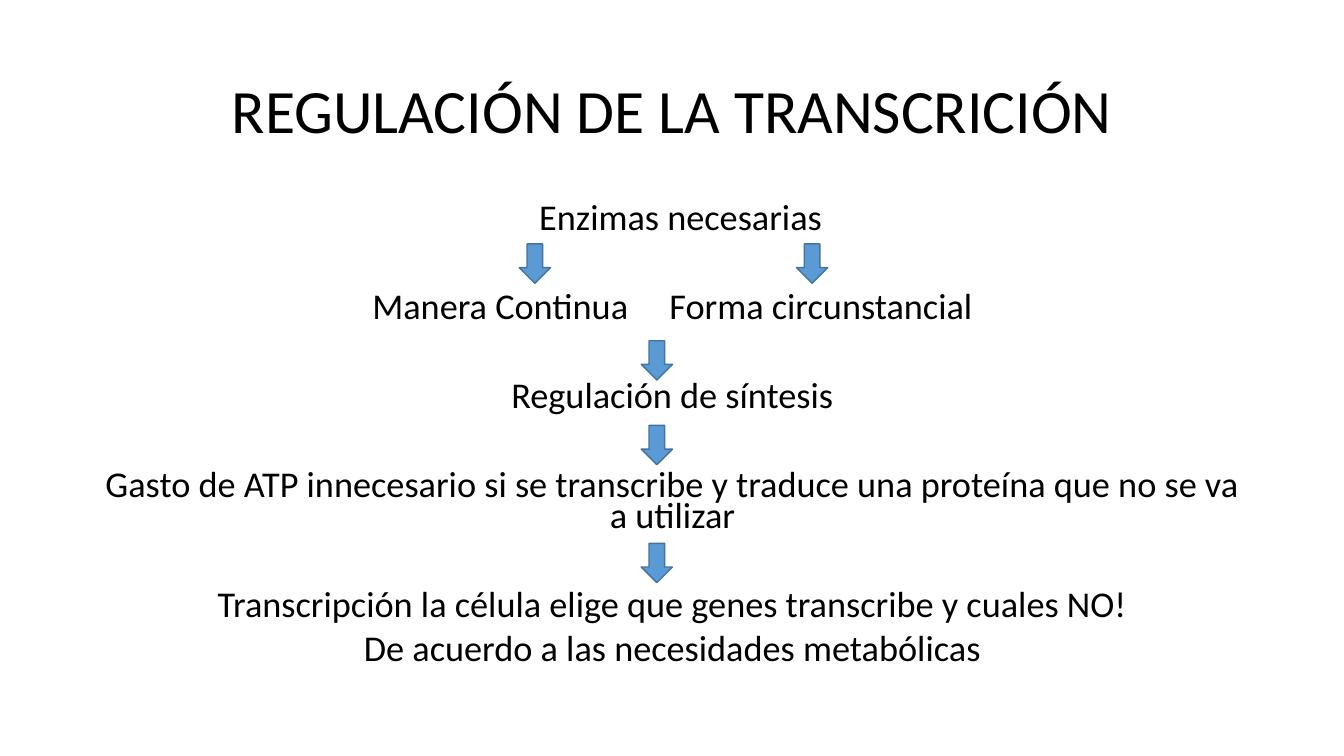
from pptx import Presentation
from pptx import util as u
from pptx.dml.color import RGBColor
from pptx.enum import shapes, text

TITLE = "REGULACIÓN DE LA TRANSCRICIÓN"
BRANCHES = ("Manera Continua", "Forma circunstancial")
# Each step: its pieces of text, space before and left indent in points
NEAR, FAR = 10, 41.8
STEPS = [
    (("Enzimas necesarias",), NEAR, 11.7),
    (BRANCHES, FAR, 0),
    (("Regulación de síntesis",), FAR, 0),
    (("Gasto de ATP innecesario si se transcribe y traduce una proteína "
      "que no se va a utilizar",), FAR, 0),
    (("Transcripción la célula elige que genes transcribe y cuales NO!",), FAR, 0),
    (("De acuerdo a las necesidades metabólicas",), NEAR, 0),
]
BRANCH_GAP = 23.4  # points added to the single space between branches

# Arrow positions: left, top in inches
LEFT_BRANCH, RIGHT_BRANCH, TRUNK = 5.15, 7.9, 6.36
ARROWS = [(LEFT_BRANCH, 2.42), (RIGHT_BRANCH, 2.42),
          (TRUNK, 3.38), (TRUNK, 4.22), (TRUNK, 5.39)]
ARROW_WIDTH, ARROW_HEIGHT = 0.31, 0.39

BLACK = RGBColor(0x00, 0x00, 0x00)
BLUE = RGBColor(0x5B, 0x9B, 0xD5)
DARK_BLUE = RGBColor(0x43, 0x73, 0x9E)

SLIDE_WIDTH, SLIDE_HEIGHT = 13.33, 7.5
MARGIN = 0.92
CONTENT_WIDTH = 11.5


def add_text_area(slide, top, height):
    area = slide.shapes.add_textbox(u.Inches(MARGIN), u.Inches(top),
                                    u.Inches(CONTENT_WIDTH), u.Inches(height))
    area.text_frame.word_wrap = True
    return area.text_frame


def style(paragraph, size, line_spacing):
    paragraph.alignment = text.PP_ALIGN.CENTER
    paragraph.line_spacing = line_spacing
    paragraph.font.size = u.Pt(size)
    paragraph.font.name = "Calibri"
    paragraph.font.color.rgb = BLACK


def add_pieces(paragraph, pieces):
    """Write the pieces on one line, parted by a widened space."""
    for index, piece in enumerate(pieces):
        if index:
            gap = paragraph.add_run()
            gap.text = " "
            gap.font._element.set("spc", str(round(BRANCH_GAP * 100)))
        paragraph.add_run().text = piece


def add_title(slide):
    frame = add_text_area(slide, 0.4, 1.45)
    frame.vertical_anchor = text.MSO_ANCHOR.MIDDLE
    heading = frame.paragraphs[0]
    heading.text = TITLE
    style(heading, 44, 0.9)


def add_steps(slide):
    frame = add_text_area(slide, 2, 4.76)
    for index, (pieces, space_before, indent) in enumerate(STEPS):
        step = frame.add_paragraph() if index else frame.paragraphs[0]
        add_pieces(step, pieces)
        style(step, 25.9, 0.7)
        step.space_before = u.Pt(space_before)
        if indent:
            step._p.get_or_add_pPr().set("marL", str(u.Pt(indent)))


def add_arrows(slide):
    for left, top in ARROWS:
        arrow = slide.shapes.add_shape(
            shapes.MSO_SHAPE.DOWN_ARROW, u.Inches(left), u.Inches(top),
            u.Inches(ARROW_WIDTH), u.Inches(ARROW_HEIGHT))
        arrow.shadow.inherit = False
        arrow.fill.solid()
        arrow.fill.fore_color.rgb = BLUE
        arrow.line.color.rgb = DARK_BLUE
        arrow.line.width = u.Pt(1)


def main():
    deck = Presentation()
    deck.slide_width = u.Inches(SLIDE_WIDTH)
    deck.slide_height = u.Inches(SLIDE_HEIGHT)
    slide = deck.slides.add_slide(deck.slide_layouts[6])
    add_title(slide)
    add_steps(slide)
    add_arrows(slide)
    deck.save("out.pptx")


if __name__ == "__main__":
    main()
